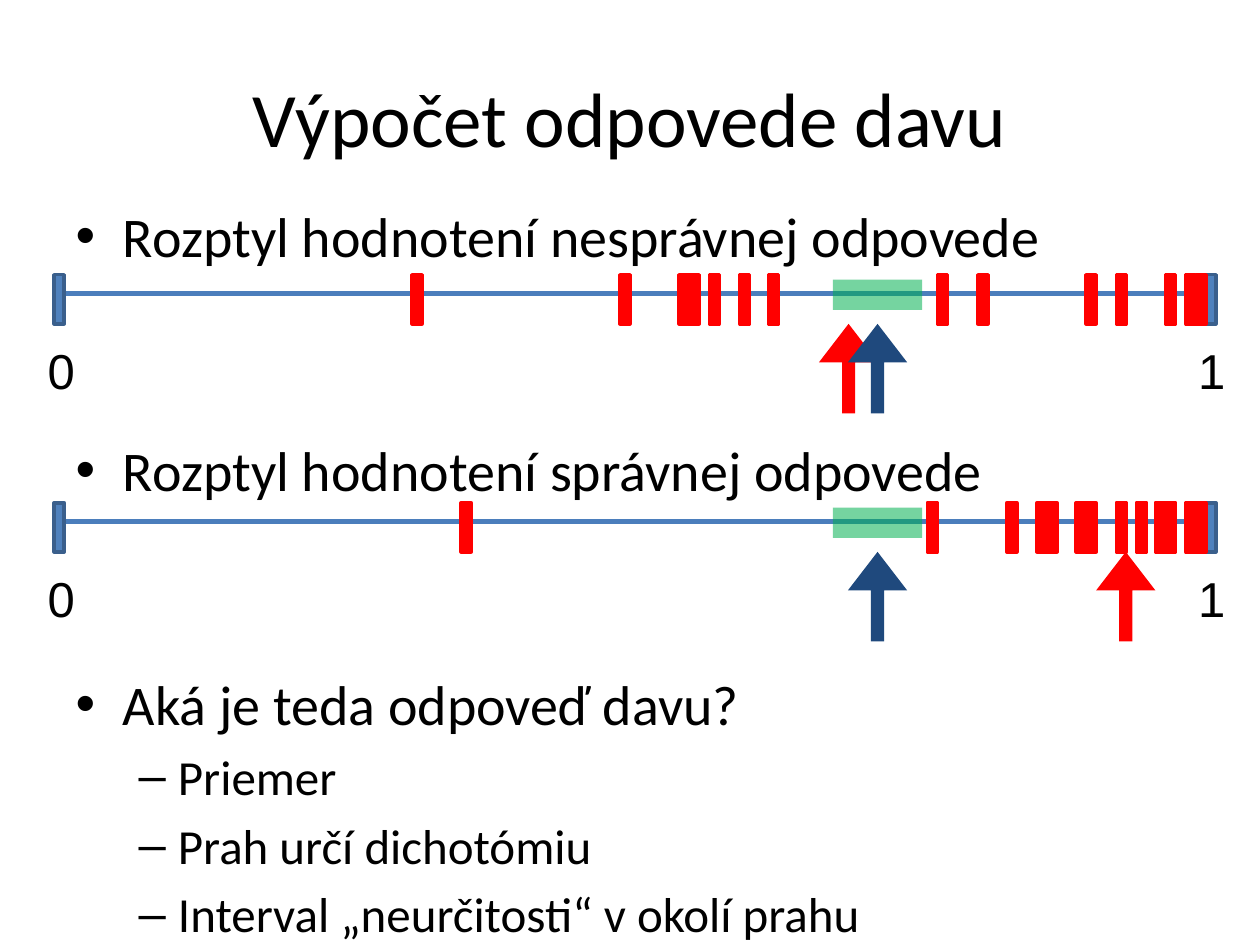
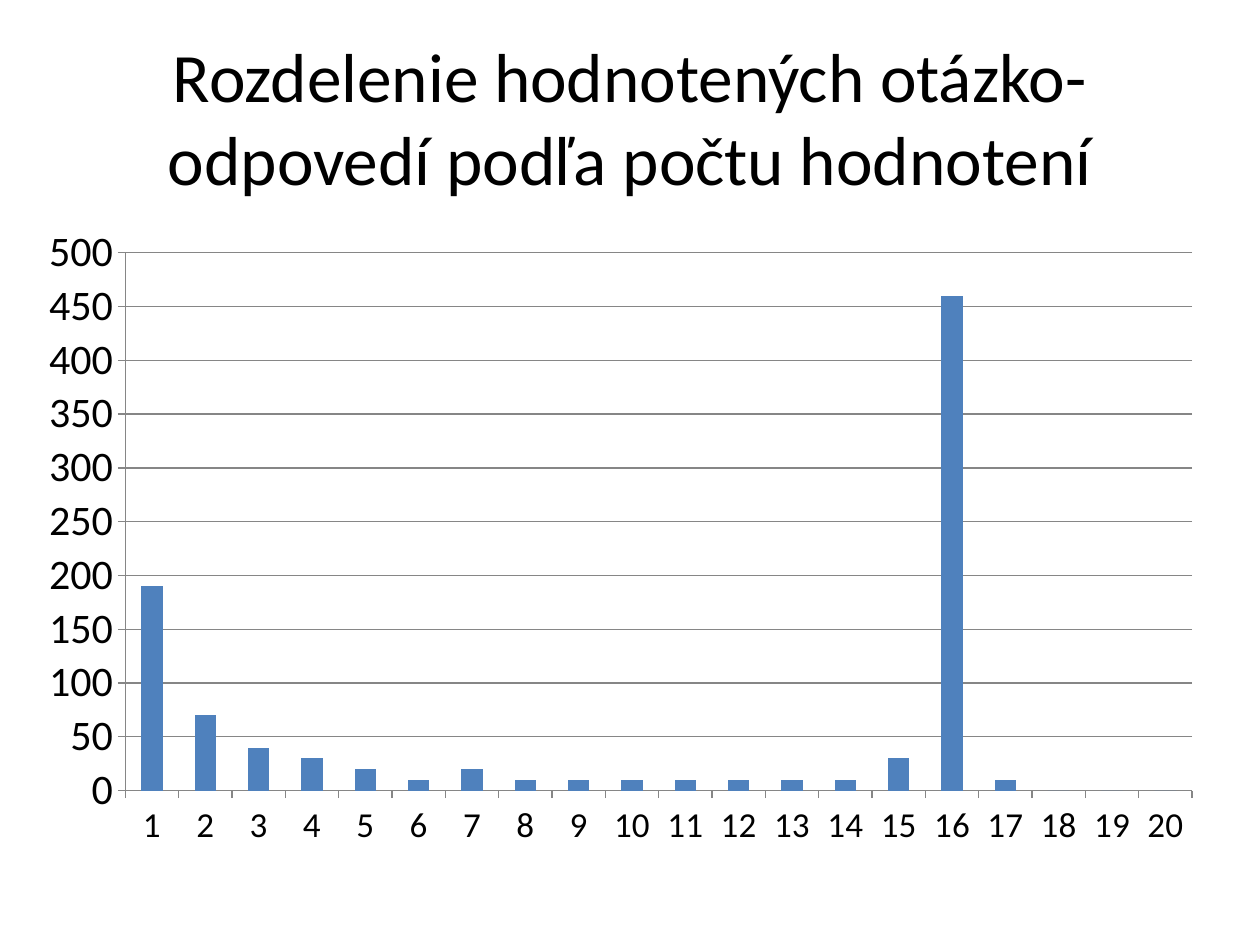
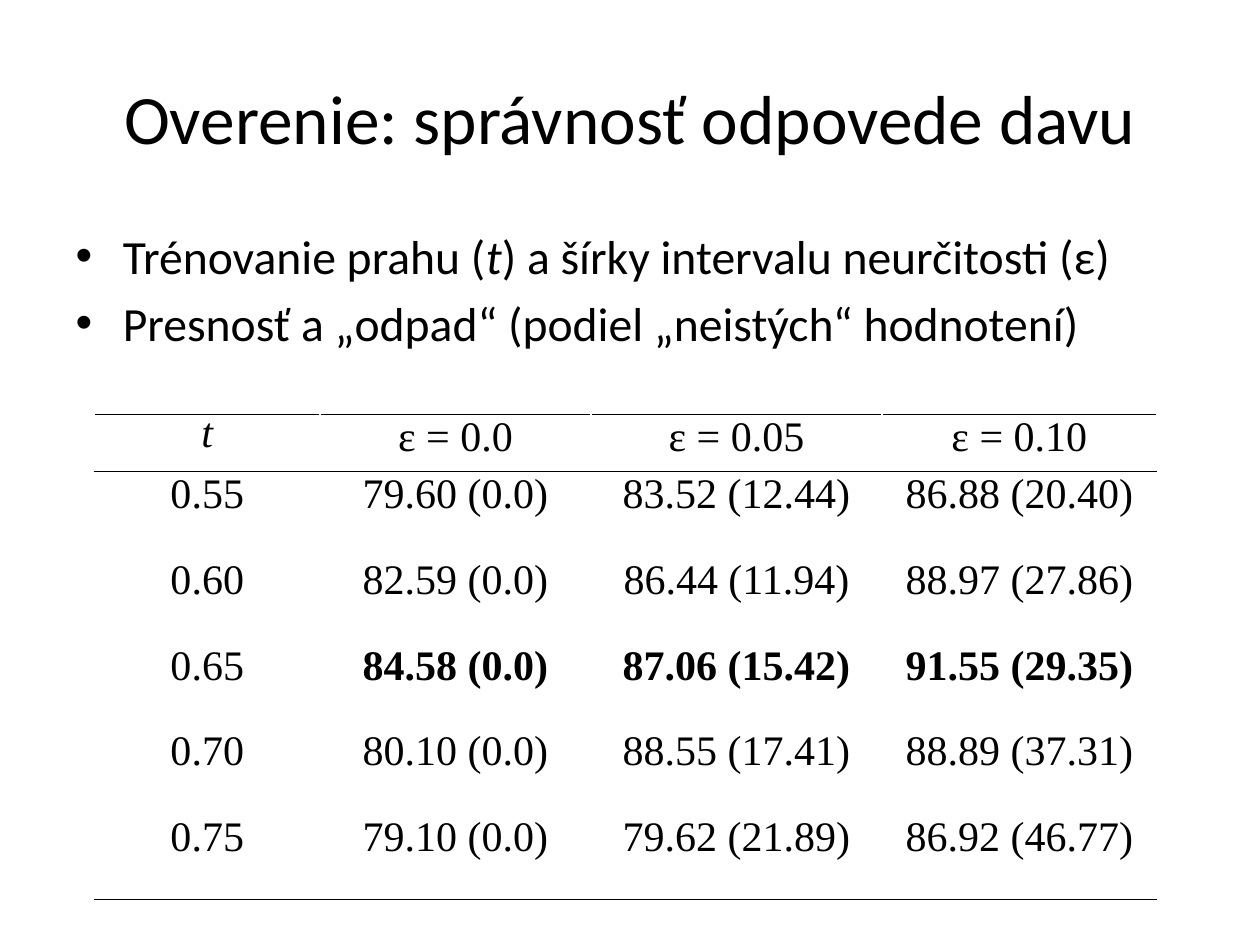
from lxml.etree import SubElement
from pptx import Presentation
from pptx.chart.data import CategoryChartData
from pptx.dml.color import RGBColor
from pptx.enum.chart import XL_CHART_TYPE as ChartType, XL_TICK_MARK as TickMark
from pptx.enum.shapes import MSO_CONNECTOR as Connector, MSO_SHAPE as Shape
from pptx.enum.text import MSO_AUTO_SIZE as AutoSize, PP_ALIGN as Align
from pptx.oxml.ns import qn
from pptx.util import Inches, Pt

BLACK, RED, GREEN, NAVY = "000000", "FF0000", "00B050", "1F497D"
BLUE, BLUE_EDGE, BLUE_LINE, GRAY = "4F81BD", "3A5F8C", "4B7EBC", "868686"
TITLE_AND_BODY, TITLE_ONLY = 1, 5

SCALE_LEFT, SCALE_RIGHT = 0.43, 9.57
TICK_WIDTH, TICK_HEIGHT = 0.08, 0.39
THRESHOLD_ARROW = 6.73

WRONG_RATINGS = [3.27, 4.92, 5.39, 5.47, 5.63, 5.87, 6.1, 7.44, 7.76,
                 8.62, 8.86, 9.25, 9.41, 9.49]
RIGHT_RATINGS = [3.66, 7.36, 7.99, 8.23, 8.31, 8.54, 8.62, 8.86, 9.02,
                 9.17, 9.25, 9.41, 9.49]
RATING_COUNTS = [190, 70, 40, 30, 20, 10, 20, 10, 10, 10,
                 10, 10, 10, 10, 30, 460, 10, 0, 0, 0]
ACCURACY = [
    ["t", "ε = 0.0", "ε = 0.05", "ε = 0.10"],
    ["0.55", "79.60 (0.0)", "83.52 (12.44)", "86.88 (20.40)"],
    ["0.60", "82.59 (0.0)", "86.44 (11.94)", "88.97 (27.86)"],
    ["0.65", "84.58 (0.0)", "87.06 (15.42)", "91.55 (29.35)"],
    ["0.70", "80.10 (0.0)", "88.55 (17.41)", "88.89 (37.31)"],
    ["0.75", "79.10 (0.0)", "79.62 (21.89)", "86.92 (46.77)"],
]
BEST_ROW = 3


def rgb(color):
    return RGBColor.from_string(color)


def place(shape, left, top, width, height):
    shape.left, shape.top = Inches(left), Inches(top)
    shape.width, shape.height = Inches(width), Inches(height)


def style_font(font, size, name="Calibri"):
    font.size, font.name = Pt(size), name
    font.color.rgb = rgb(BLACK)


def add_page(deck, layout, title, size=39.6):
    page = deck.slides.add_slide(deck.slide_layouts[layout])
    heading = page.shapes.title
    place(heading, 0.5, 0.3, 9, 1.25)
    heading.text_frame.text = title
    heading.text_frame.auto_size = AutoSize.NONE
    style_font(heading.text_frame.paragraphs[0].runs[0].font, size)
    return page


def fill_body(page, top, height, items):
    """Fill the body with (spans, level, size, space before or None) items."""
    body = page.placeholders[1]
    place(body, 0.5, top, 9, height)
    frame = body.text_frame
    frame.auto_size = AutoSize.NONE
    for index, (spans, level, size, space) in enumerate(items):
        para = frame.add_paragraph() if index else frame.paragraphs[0]
        para.level = level
        if space is not None:
            para.space_before = Pt(space)
        for text, italic in spans:
            span = para.add_run()
            span.text = text
            style_font(span.font, size)
            span.font.italic = italic


def add_block(shapes, kind, box, fill, edge=None):
    block = shapes.add_shape(kind, *map(Inches, box))
    block.shadow.inherit = False
    block.fill.solid()
    block.fill.fore_color.rgb = rgb(fill)
    if edge:
        block.line.color.rgb = rgb(edge)
        block.line.width = Pt(2)
    else:
        block.line.fill.background()
    return block


def add_scale(page, top, ratings):
    """Draw the 0 to 1 scale with one red tick for each rating."""
    shapes = page.shapes.add_group_shape().shapes
    axis_y = Inches(top + 0.15)
    axis = shapes.add_connector(Connector.STRAIGHT, Inches(SCALE_LEFT), axis_y,
                                Inches(SCALE_RIGHT), axis_y)
    axis.line.color.rgb = rgb(BLUE_LINE)
    axis.line.width = Pt(3)
    SubElement(axis._element.spPr, qn("a:effectLst"))
    for left in (SCALE_LEFT, SCALE_RIGHT):
        add_block(shapes, Shape.RECTANGLE,
                  (left, top, TICK_WIDTH, TICK_HEIGHT), BLUE, BLUE_EDGE)
    for left in ratings:
        add_block(shapes, Shape.RECTANGLE,
                  (left, top, TICK_WIDTH, TICK_HEIGHT), RED, RED)
    for text, left in (("0", 0.28), ("1", 9.41)):
        label = shapes.add_textbox(Inches(left), Inches(top + 0.47),
                                   Inches(0.39), Inches(0.57))
        label.text_frame.text = text
        label.text_frame.word_wrap = False
        style_font(label.text_frame.paragraphs[0].runs[0].font, 28, "Arial")


def add_arrow(page, left, scale_top, color):
    arrow = add_block(page.shapes, Shape.UP_ARROW,
                      (left, scale_top + TICK_HEIGHT, 0.47, 0.71), color)
    arrow.adjustments[0], arrow.adjustments[1] = 0.22, 0.65


def add_uncertainty(page, scale_top):
    band = add_block(page.shapes, Shape.RECTANGLE,
                     (6.61, scale_top + 0.04, 0.71, 0.24), GREEN)
    color = band._element.spPr.find(qn("a:solidFill"))[0]
    SubElement(color, qn("a:alpha"), val="54000")


def add_count_chart(page):
    data = CategoryChartData()
    data.categories = [str(count) for count in range(1, len(RATING_COUNTS) + 1)]
    data.add_series("Series 1", RATING_COUNTS)
    chart = page.shapes.add_chart(
        ChartType.COLUMN_CLUSTERED, Inches(0.2), Inches(1.7),
        Inches(9.45), Inches(5.12), data).chart
    chart.has_legend = chart.has_title = False
    style_font(chart.font, 10)
    plot = chart.plots[0]
    plot.gap_width = 150
    plot.vary_by_categories = False
    fill = plot.series[0].format.fill
    fill.solid()
    fill.fore_color.rgb = rgb(BLUE)
    for axis, size in ((chart.category_axis, 20), (chart.value_axis, 24)):
        style_font(axis.tick_labels.font, size)
        axis.major_tick_mark = TickMark.OUTSIDE
        axis.format.line.color.rgb = rgb(GRAY)
    values = chart.value_axis
    values.minimum_scale, values.maximum_scale, values.major_unit = 0, 500, 50
    values.has_major_gridlines = True
    values.major_gridlines.format.line.color.rgb = rgb(GRAY)


def add_border(cell, side):
    line = SubElement(cell._tc.get_or_add_tcPr(), qn(f"a:{side}"), w=str(Pt(1)))
    SubElement(SubElement(line, qn("a:solidFill")), qn("a:srgbClr"), val=BLACK)


def fill_cell(cell, text, borders, bold):
    for side in borders:
        add_border(cell, side)
    cell.fill.background()
    cell.margin_left = cell.margin_right = Inches(0.07)
    cell.margin_top = cell.margin_bottom = 0
    cell.text_frame.text = text
    para = cell.text_frame.paragraphs[0]
    para.alignment = Align.CENTER
    style_font(para.runs[0].font, 24, "Times New Roman")
    para.runs[0].font.bold = bold


def add_accuracy_table(page):
    widths = [1.79, 2.15, 2.31, 2.18]
    heights = [0.45] + [0.68] * (len(ACCURACY) - 1)
    table = page.shapes.add_table(
        len(heights), len(widths), Inches(0.75), Inches(3.29),
        Inches(sum(widths)), Inches(sum(heights))).table
    table.first_row = table.horz_banding = False
    for column, width in zip(table.columns, widths):
        column.width = Inches(width)
    borders = {0: ["lnT", "lnB"], 1: ["lnT"], len(ACCURACY) - 1: ["lnB"]}
    for r, values in enumerate(ACCURACY):
        table.rows[r].height = Inches(heights[r])
        for c, text in enumerate(values):
            fill_cell(table.cell(r, c), text, borders.get(r, []),
                      r == BEST_ROW and c > 0)
    corner = table.cell(0, 0)
    corner.margin_top = Inches(0.17)
    para = corner.text_frame.paragraphs[0]
    para.line_spacing = Pt(12)
    para.runs[0].font.italic = True


def add_answer_page(deck):
    page = add_page(deck, TITLE_AND_BODY, "Výpočet odpovede davu", 44)
    topics = [("Rozptyl hodnotení nesprávnej odpovede", None),
              ("Rozptyl hodnotení správnej odpovede", 95.3),
              ("Aká je teda odpoveď davu?", 95.3)]
    details = ["Priemer", "Prah určí dichotómiu",
               "Interval „neurčitosti“ v okolí prahu"]
    fill_body(page, 1.55, 5.67,
              [([(text, False)], 0, 32, space) for text, space in topics]
              + [([(text, False)], 1, 28, None) for text in details])
    scales = [(2.18, WRONG_RATINGS, 6.5), (3.99, RIGHT_RATINGS, 8.7)]
    for top, ratings, mean_arrow in scales:
        add_scale(page, top, ratings)
        add_arrow(page, mean_arrow, top, RED)
        add_arrow(page, THRESHOLD_ARROW, top, NAVY)
        add_uncertainty(page, top)


def add_count_page(deck):
    page = add_page(deck, TITLE_ONLY,
                    "Rozdelenie hodnotených otázko-odpovedí podľa počtu hodnotení")
    add_count_chart(page)


def add_accuracy_page(deck):
    page = add_page(deck, TITLE_AND_BODY, "Overenie: správnosť odpovede davu")
    training = [("Trénovanie prahu (", False), ("t", True),
                (") a šírky intervalu neurčitosti (ε)", False)]
    waste = [("Presnosť a „odpad“ (podiel „neistých“ hodnotení)", False)]
    fill_body(page, 1.75, 1.29,
              [(spans, 0, 27.2, None) for spans in (training, waste)])
    add_accuracy_table(page)


def main():
    deck = Presentation()
    deck.slide_width, deck.slide_height = Inches(10), Inches(7.5)
    add_answer_page(deck)
    add_count_page(deck)
    add_accuracy_page(deck)
    deck.save("out.pptx")


if __name__ == "__main__":
    main()
